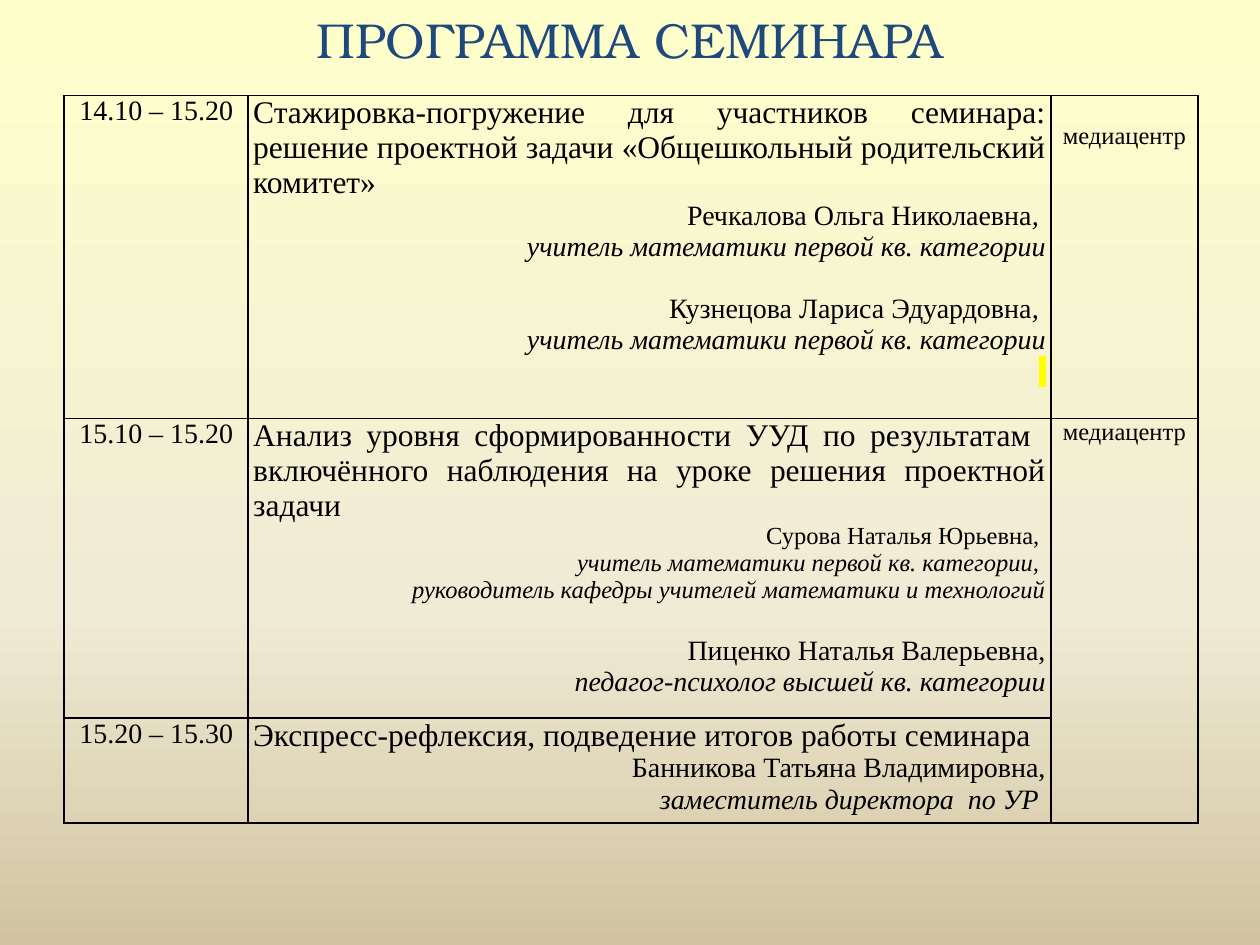
from dataclasses import dataclass

from lxml import etree
from pptx import Presentation
from pptx.dml.color import RGBColor
from pptx.enum.text import MSO_ANCHOR, PP_ALIGN
from pptx.oxml.ns import qn
from pptx.util import Inches, Pt

CENTER, RIGHT, JUSTIFY = PP_ALIGN.CENTER, PP_ALIGN.RIGHT, PP_ALIGN.JUSTIFY
MIDDLE, TOP = MSO_ANCHOR.MIDDLE, MSO_ANCHOR.TOP


@dataclass(frozen=True)
class Theme:
    title_font: str = "TeX Gyre Bonum"
    body_font: str = "Times New Roman"
    title_color: str = "1F497D"
    ink: str = "000000"
    marker: str = "FFFF00"
    backdrop: tuple = ((0, "FFFFCC"), (65, "F0EBD5"), (100, "D1C39F"))
    title_size: int = 28
    topic_size: int = 18
    speaker_size: int = 16
    small_size: int = 14
    border: float = 1


THEME = Theme()
BLANK_LINE = 17.7  # gap as tall as one speaker line, in points
COLUMN_WIDTHS = (1.46, 6.37, 1.17)
ROW_HEIGHTS = (2.56, 2.21, 0.77)
SIDE_INSETS = (0.02, 0.04, 0.02)
TEACHER = "учитель математики первой кв. категории"


def line(*runs, align=RIGHT, size=THEME.speaker_size, gap=0):
    """One paragraph; each run is (text, italic) or (text, italic, highlight)."""
    return {"runs": runs, "align": align, "size": size, "gap": gap}


def topic(text):
    return line((text, False), align=JUSTIFY, size=THEME.topic_size)


def time(text):
    return [line((text, False), align=CENTER)]


def place(text):
    return [line((text, False), align=CENTER, size=THEME.small_size)]


PROGRAM = (
    (
        time("14.10 – 15.20"),
        [
            topic("Стажировка-погружение для участников семинара: решение "
                  "проектной задачи «Общешкольный родительский комитет» "),
            line(("Речкалова Ольга Николаевна", False), (", ", True)),
            line((TEACHER, True)),
            line(("Кузнецова Лариса Эдуардовна", False), (", ", True), gap=BLANK_LINE),
            line((TEACHER, True)),
            line(("\N{NO-BREAK SPACE}", False, THEME.marker)),
        ],
        place("медиацентр"),
    ),
    (
        time("15.10 – 15.20"),
        [
            topic("Анализ уровня сформированности УУД по результатам  включённого "
                  "наблюдения на уроке решения проектной задачи"),
            line(("Сурова Наталья Юрьевна, ", False), size=THEME.small_size),
            line((TEACHER + ", ", True), size=THEME.small_size),
            line(("руководитель кафедры учителей математики и технологий", True),
                 size=THEME.small_size),
            line(("Пиценко Наталья Валерьевна,", False), gap=BLANK_LINE),
            line(("педагог-психолог высшей кв. категории", True)),
        ],
        place("медиацентр"),
    ),
    (
        time("15.20 – 15.30"),
        [
            topic("Экспресс-рефлексия, подведение итогов работы семинара"),
            line(("Банникова Татьяна Владимировна,", False)),
            line((" заместитель директора  по УР ", True)),
        ],
        [],
    ),
)


def add_color(parent, color):
    etree.SubElement(parent, qn("a:srgbClr"), val=color)


def paint_background(slide):
    fill = slide.background.fill
    fill.gradient()
    fill.gradient_angle = 270
    stops = next(slide.element.iter(qn("a:gsLst")))
    for old_stop in list(stops):
        stops.remove(old_stop)
    for percent, color in THEME.backdrop:
        add_color(etree.SubElement(stops, qn("a:gs"), pos=str(percent * 1000)), color)


def add_run(paragraph, text, font, size, color, italic=False, highlight=None):
    run = paragraph.add_run()
    run.text = text
    run.font.name = font
    run.font.size = Pt(size)
    run.font.italic = italic
    run.font.color.rgb = RGBColor.from_string(color)
    if highlight:
        mark = etree.Element(qn("a:highlight"))
        add_color(mark, highlight)
        run.font._element.find(qn("a:solidFill")).addnext(mark)


def add_title(slide, text):
    title = slide.shapes.add_textbox(Inches(0.5), Inches(0), Inches(9), Inches(0.62))
    frame = title.text_frame
    frame.word_wrap = True
    frame.vertical_anchor = MIDDLE
    paragraph = frame.paragraphs[0]
    paragraph.alignment = CENTER
    add_run(paragraph, text, THEME.title_font, THEME.title_size, THEME.title_color)


def draw_borders(cell):
    properties = cell._tc.get_or_add_tcPr()
    for index, side in enumerate(("lnL", "lnR", "lnT", "lnB")):
        border = etree.Element(qn(f"a:{side}"), w=str(Pt(THEME.border)))
        add_color(etree.SubElement(border, qn("a:solidFill")), THEME.ink)
        properties.insert(index, border)


def fill_cell(cell, lines, side_inset):
    cell.margin_left = cell.margin_right = Inches(side_inset)
    cell.margin_top = cell.margin_bottom = 0
    cell.vertical_anchor = TOP
    cell.fill.background()
    draw_borders(cell)
    frame = cell.text_frame
    for index, item in enumerate(lines):
        paragraph = frame.add_paragraph() if index else frame.paragraphs[0]
        paragraph.alignment = item["align"]
        paragraph.space_before = Pt(item["gap"])
        for text, italic, *highlight in item["runs"]:
            add_run(paragraph, text, THEME.body_font, item["size"], THEME.ink,
                    italic, *highlight)


def add_program(slide):
    schedule = slide.shapes.add_table(
        len(ROW_HEIGHTS), len(COLUMN_WIDTHS), Inches(0.51), Inches(0.76),
        Inches(sum(COLUMN_WIDTHS)), Inches(sum(ROW_HEIGHTS))).table
    schedule.first_row = schedule.horz_banding = False
    for column, width in zip(schedule.columns, COLUMN_WIDTHS):
        column.width = Inches(width)
    for row, height, session in zip(schedule.rows, ROW_HEIGHTS, PROGRAM):
        row.height = Inches(height)
        for cell, lines, inset in zip(row.cells, session, SIDE_INSETS):
            fill_cell(cell, lines, inset)
    # The first place sits one line lower; the last two sessions share a place
    schedule.cell(0, 2).margin_top = Inches(0.21)
    schedule.cell(1, 2).merge(schedule.cell(2, 2))


def main():
    deck = Presentation()
    deck.slide_width, deck.slide_height = Inches(10), Inches(7.5)
    slide = deck.slides.add_slide(deck.slide_layouts[6])
    paint_background(slide)
    add_title(slide, "ПРОГРАММА СЕМИНАРА")
    add_program(slide)
    deck.save("out.pptx")


if __name__ == "__main__":
    main()
